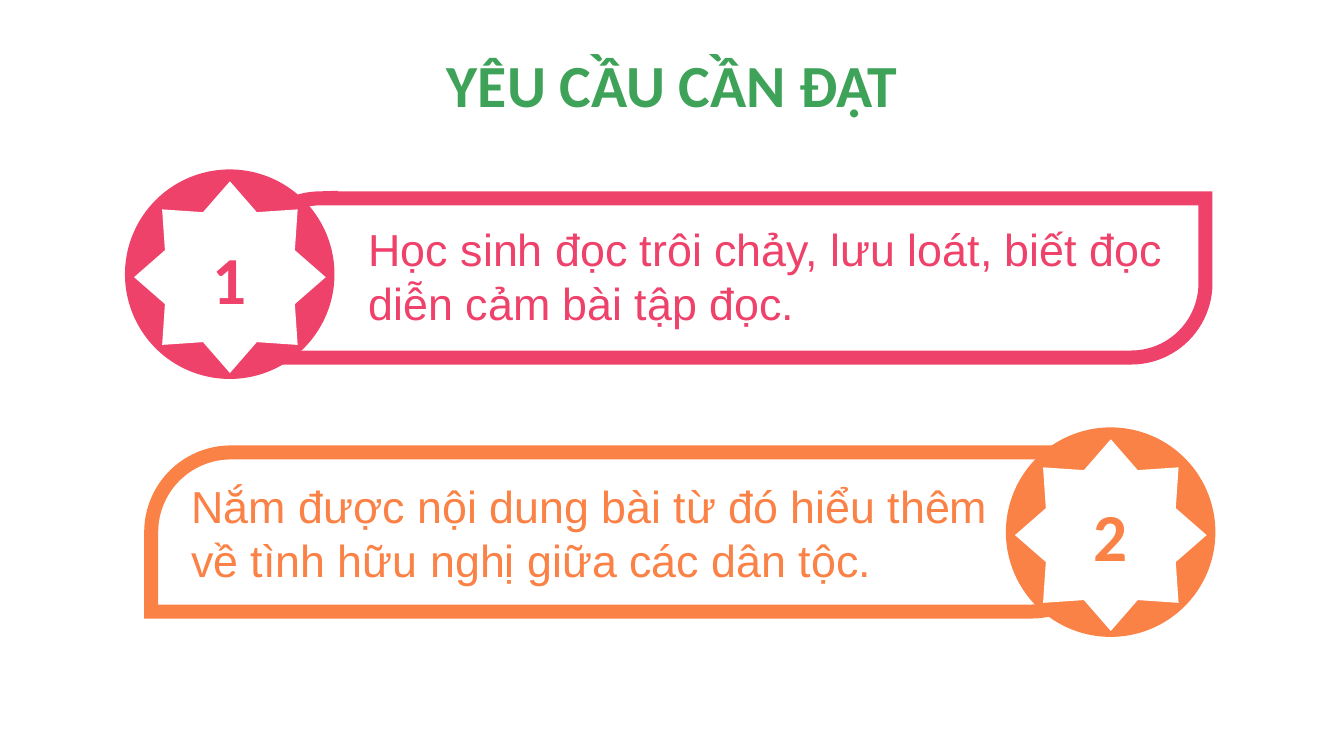
from lxml import etree
from pptx import Presentation, util as u
from pptx.dml.color import RGBColor
from pptx.enum import shapes, text
from pptx.oxml.ns import qn

COLORS = {"title": "3EA258", "pink": "EE426B", "orange": "FB8246", "white": "FFFFFF"}
TITLE = "YÊU CẦU CẦN ĐẠT"
# Positions are (left, top) in centimetres
GOALS = [
    dict(number="1", color="pink", rotation=0, corner=0.467,
         frame=(6.2, 5.0), disc=(3.15, 4.27), words=(9.04, 5.46),
         goal="Học sinh đọc trôi chảy, lưu loát, biết đọc diễn cảm bài tập đọc."),
    dict(number="2", color="orange", rotation=180, corner=0.5,
         frame=(3.81, 11.4), disc=(25.35, 10.77), words=(4.57, 11.94),
         goal="Nắm được nội dung bài từ đó hiểu thêm về tình hữu nghị giữa các dân tộc."),
]
FRAME_SIZE = (24.18, 4.01)
DISC_SIZE = (5.28, 5.28)
STAR_SIZE = (4.83, 4.83)
STAR_OFFSET = (0.23, 0.3)
WORDS_SIZE = (20.88, 3.0)


def rgb(name):
    return RGBColor.from_string(COLORS[name])


def lengths(*values):
    return [u.Cm(value) for value in values]


def add_plain_shape(page, kind, position, size, fill=None):
    shape = page.shapes.add_shape(kind, *lengths(*position, *size))
    shape.shadow.inherit = False
    shape.line.fill.background()
    if fill:
        shape.fill.solid()
        shape.fill.fore_color.rgb = rgb(fill)
    else:
        shape.fill.background()
    return shape


def write(box, words, font, size, color, bold=False, align=text.PP_ALIGN.CENTER):
    para = box.text_frame.paragraphs[0]
    para.text = words
    para.alignment = align
    para.font.name = font
    para.font.size = u.Pt(size)
    para.font.bold = bold
    para.font.color.rgb = rgb(color)


def add_goal(page, item):
    color = item["color"]
    kind = shapes.MSO_SHAPE
    frame = add_plain_shape(page, kind.ROUND_2_DIAG_RECTANGLE, item["frame"], FRAME_SIZE)
    frame.adjustments[0] = item["corner"]
    frame.adjustments[1] = 0
    frame.rotation = item["rotation"]
    frame.line.color.rgb = rgb(color)
    frame.line.width = u.Pt(10)
    outline = frame.element.spPr.find(qn("a:ln"))
    etree.SubElement(outline, qn("a:miter"), lim="800000")

    add_plain_shape(page, kind.FLOWCHART_CONNECTOR, item["disc"], DISC_SIZE, color)
    star_position = [a + b for a, b in zip(item["disc"], STAR_OFFSET)]
    star = add_plain_shape(page, kind.STAR_8_POINT, star_position, STAR_SIZE, "white")
    star.adjustments[0] = 0.367
    star.text_frame.vertical_anchor = text.MSO_ANCHOR.MIDDLE
    write(star, item["number"], "Calibri", 48, color, bold=True)

    words = page.shapes.add_textbox(*lengths(*item["words"], *WORDS_SIZE))
    words.text_frame.word_wrap = True
    write(words, item["goal"], "Arial", 32, color, align=text.PP_ALIGN.LEFT)


def main():
    deck = Presentation()
    deck.slide_width, deck.slide_height = lengths(33.87, 19.05)
    page = deck.slides.add_slide(deck.slide_layouts[5])

    title = page.shapes.title
    title.left, title.top, title.width, title.height = lengths(10.95, 1.07, 11.99, 2.08)
    title.text_frame.word_wrap = False
    title.text_frame.auto_size = text.MSO_AUTO_SIZE.NONE
    title.text_frame.vertical_anchor = text.MSO_ANCHOR.MIDDLE
    write(title, TITLE, "Calibri", 42.7, "title", bold=True)

    for item in GOALS:
        add_goal(page, item)
    deck.save("out.pptx")


if __name__ == "__main__":
    main()
